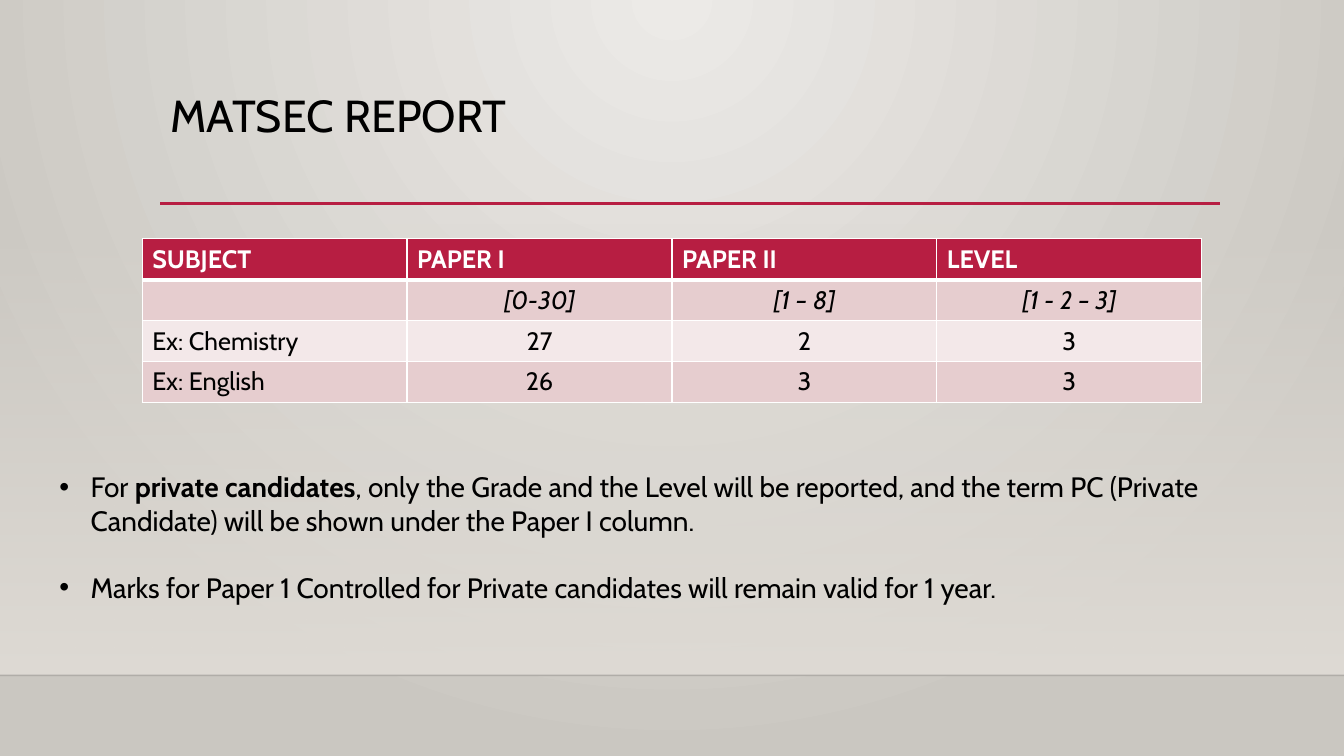
import pptx
import pptx.util
import pptx.dml.color
import pptx.enum.shapes
import pptx.enum.text
import pptx.oxml
import pptx.oxml.ns
from lxml import etree

RGBColor = pptx.dml.color.RGBColor
ALIGN = pptx.enum.text.PP_ALIGN
ANCHOR = pptx.enum.text.MSO_ANCHOR
qn = pptx.oxml.ns.qn

FONT = "Cabin"
BLACK = RGBColor(0x00, 0x00, 0x00)
WHITE = RGBColor(0xFF, 0xFF, 0xFF)
CRIMSON = RGBColor(0xB7, 0x1E, 0x42)
ROSE = RGBColor(0xE6, 0xCD, 0xCF)
PALE_ROSE = RGBColor(0xF3, 0xE8, 0xE9)
IVORY = RGBColor(0xEC, 0xEA, 0xE7)
STONE = RGBColor(0xCA, 0xC7, 0xC1)
SAND = RGBColor(0xDF, 0xDB, 0xD5)

SLIDE_WIDTH = pptx.util.Inches(13.33)
SLIDE_HEIGHT = pptx.util.Inches(7.5)
HANGING = pptx.util.Inches(0.31)

REPORT = [
    ["SUBJECT", "PAPER I", "PAPER II", "LEVEL"],
    ["", "[0-30]", "[1 – 8]", "[1 - 2 – 3]"],
    ["Ex: Chemistry", "27", "2", "3"],
    ["Ex: English", "26", "3", "3"],
]
NOTES = [
    [("For ", False), ("private candidates", True),
     (", only the Grade and the Level will be reported, and the term PC (Private "
      "Candidate) will be shown under the Paper I column.", False)],
    [("Marks for Paper 1 Controlled for Private candidates will remain valid for 1 year.",
      False)],
]


def across(percent):
    return round(SLIDE_WIDTH * percent / 100)


def down(percent):
    return round(SLIDE_HEIGHT * percent / 100)


def place(left, top, width, height):
    """Turn percentages of the slide into left, top, width and height."""
    return across(left), down(top), across(width), down(height)


def style_font(font, size, color, bold=False, italic=False):
    font.name = FONT
    font.size = pptx.util.Pt(size)
    font.color.rgb = color
    font.bold = bold
    font.italic = italic


def set_gradient(fill, holder, stops, shade):
    """Fill with (position, colour, opacity) stops and the given shade element."""
    fill.gradient()
    gradient = next(holder.iter(qn("a:gradFill")))
    for child in list(gradient):
        gradient.remove(child)
    stop_list = etree.SubElement(gradient, qn("a:gsLst"))
    for position, color, opacity in stops:
        stop = etree.SubElement(stop_list, qn("a:gs"), pos=str(position * 1000))
        value = etree.SubElement(stop, qn("a:srgbClr"), val=str(color))
        etree.SubElement(value, qn("a:alpha"), val=str(opacity * 1000))
    gradient.append(pptx.oxml.parse_xml(shade))


def paint_background(page):
    namespace = pptx.oxml.ns.nsdecls("a")
    fill = page.background.fill
    set_gradient(
        fill, page.element.find(".//" + qn("p:bg")),
        [(0, IVORY, 100), (100, STONE, 100)],
        f'<a:path {namespace} path="circle">'
        '<a:fillToRect l="43000" t="0" r="43000" b="100000"/></a:path>')
    panel = page.shapes.add_shape(
        pptx.enum.shapes.MSO_SHAPE.RECTANGLE, *place(0, 29.47, 100, 59.86))
    panel.shadow.inherit = False
    panel.line.fill.background()
    set_gradient(panel.fill, panel.element, [(0, SAND, 0), (100, SAND, 100)],
                 f'<a:lin {namespace} ang="5400000" scaled="0"/>')


def add_rule(page, left, right, top, color, weight, opacity=100):
    rule = page.shapes.add_connector(
        pptx.enum.shapes.MSO_CONNECTOR.STRAIGHT,
        across(left), down(top), across(right), down(top))
    rule.line.color.rgb = color
    rule.line.width = pptx.util.Pt(weight)
    value = next(rule.element.spPr.iter(qn("a:srgbClr")))
    etree.SubElement(value, qn("a:alpha"), val=str(opacity * 1000))
    etree.SubElement(rule.element.spPr, qn("a:effectLst"))


def set_title(page, text):
    title = page.shapes.title
    title.left, title.top, title.width, title.height = place(11.93, 11.73, 78.77, 15.33)
    frame = title.text_frame
    frame.text = text
    frame.vertical_anchor = ANCHOR.TOP
    para = frame.paragraphs[0]
    para.alignment = ALIGN.LEFT
    para.line_spacing = 0.9
    style_font(para.runs[0].font, 32, BLACK)


def set_borders(cell, top, bottom):
    """Draw white borders, with the top and bottom weights in points."""
    properties = cell._tc.get_or_add_tcPr()
    weights = {"a:lnL": 1, "a:lnR": 1, "a:lnT": top, "a:lnB": bottom}
    for index, (tag, weight) in enumerate(weights.items()):
        border = etree.Element(qn(tag), w=str(pptx.util.Pt(weight)))
        solid = etree.SubElement(border, qn("a:solidFill"))
        etree.SubElement(solid, qn("a:srgbClr"), val=str(WHITE))
        properties.insert(index, border)


def add_report_table(page):
    table = page.shapes.add_table(
        len(REPORT), len(REPORT[0]), *place(10.58, 31.6, 78.84, 21.6)).table
    table.horz_banding = False
    row_fills = [CRIMSON, ROSE, PALE_ROSE, ROSE]
    for row, values in enumerate(REPORT):
        header = row == 0
        for column, value in enumerate(values):
            cell = table.cell(row, column)
            cell.text = value
            cell.fill.solid()
            cell.fill.fore_color.rgb = row_fills[row]
            set_borders(cell, 3 if row == 1 else 1, 3 if header else 1)
            para = cell.text_frame.paragraphs[0]
            para.alignment = ALIGN.LEFT if header or column == 0 else ALIGN.CENTER
            style_font(para.font, 18, WHITE if header else BLACK, header, row == 1)
            for span in para.runs:
                style_font(span.font, 18, WHITE if header else BLACK, header, row == 1)


def add_notes_list(page):
    box = page.shapes.add_textbox(*place(3.68, 61.47, 89.27, 23.73))
    frame = box.text_frame
    frame.word_wrap = True
    for index, spans in enumerate(NOTES):
        para = frame.add_paragraph() if index else frame.paragraphs[0]
        if index:
            para.space_before = pptx.util.Pt(24)
        properties = para._p.get_or_add_pPr()
        properties.set("marL", str(HANGING))
        properties.set("indent", str(-HANGING))
        etree.SubElement(properties, qn("a:buFont"), typeface="Arial")
        etree.SubElement(properties, qn("a:buChar"), char="•")
        for text, bold in spans:
            span = para.add_run()
            span.text = text
            style_font(span.font, 20, BLACK, bold)


def main():
    deck = pptx.Presentation()
    deck.slide_width = SLIDE_WIDTH
    deck.slide_height = SLIDE_HEIGHT
    page = deck.slides.add_slide(deck.slide_layouts.get_by_name("Title Only"))
    paint_background(page)
    add_rule(page, 0, 100, 89.33, BLACK, 1, opacity=20)
    add_rule(page, 11.93, 90.77, 26.93, CRIMSON, 2.5)
    set_title(page, "MATSEC REPORT")
    add_report_table(page)
    add_notes_list(page)
    deck.save("out.pptx")


if __name__ == "__main__":
    main()
